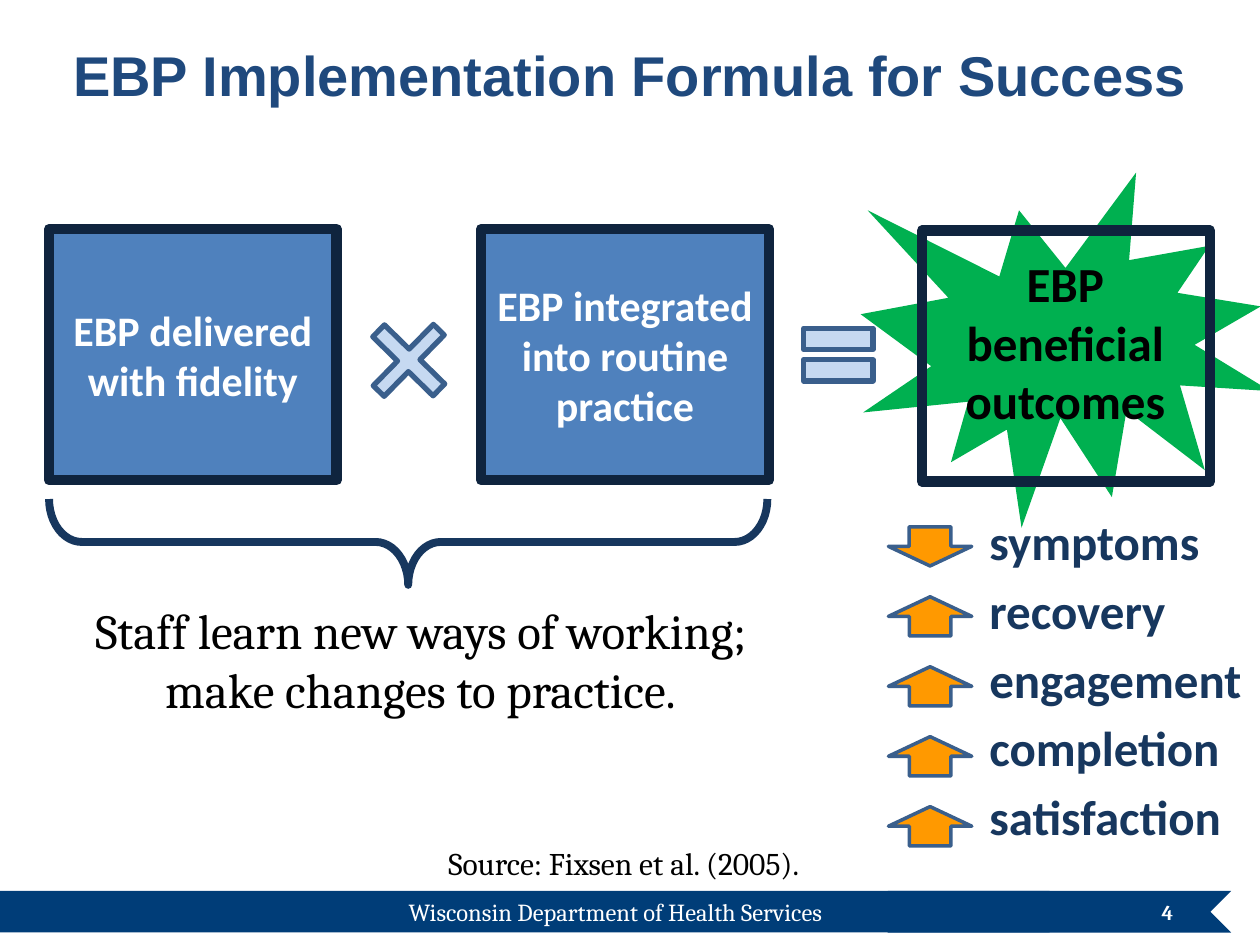
from pptx import Presentation
from pptx.dml.color import RGBColor
from pptx.enum.shapes import MSO_SHAPE as Shape
from pptx.enum.text import MSO_ANCHOR as Anchor, MSO_AUTO_SIZE as AutoSize, PP_ALIGN as Align
from pptx.oxml.ns import qn
from pptx.util import Cm, Pt
from lxml.etree import SubElement

COLORS = {
    "band": "003D78", "white": "FFFFFF", "black": "000000", "title": "1F497D",
    "factor": "4F81BD", "frame": "0F243E", "burst": "00B050", "operator": "C6D9F1",
    "edge": "3A5F8C", "arrow": "FF9900", "navy": "17375E",
}

# Text styles: font values, colour, alignment
STYLES = {
    "title": ({"name": "Arial", "size": Pt(32), "bold": True}, "title", Align.CENTER),
    "factor": ({"name": "Calibri", "size": Pt(24), "bold": True}, "white", Align.CENTER),
    "result": ({"name": "Calibri", "size": Pt(28), "bold": True}, "black", Align.CENTER),
    "outcome": ({"name": "Calibri", "size": Pt(28), "bold": True}, "navy", Align.LEFT),
    "summary": ({"name": "Cambria", "size": Pt(28), "bold": False}, "black", Align.CENTER),
    "source": ({"name": "Cambria", "size": Pt(18), "bold": False}, "black", Align.CENTER),
    "agency": ({"name": "Cambria", "size": Pt(14), "bold": False}, "white", Align.CENTER),
    "number": ({"name": "Cambria", "size": Pt(12), "bold": True}, "white", Align.RIGHT),
}


def rgb(name):
    return RGBColor.from_string(COLORS[name])


def set_all(target, values):
    for key, value in values.items():
        setattr(target, key, value)


def write(holder, lines, style, anchor=Anchor.TOP, space_before=0):
    font_values, color, align = STYLES[style]
    frame = holder.text_frame
    frame.text = "\n".join(lines)
    set_all(frame, {"word_wrap": True, "auto_size": AutoSize.NONE, "vertical_anchor": anchor})
    for paragraph in frame.paragraphs:
        set_all(paragraph, {"alignment": align, "space_before": Pt(space_before)})
        for run in paragraph.runs:
            set_all(run.font, font_values)
            run.font.color.rgb = rgb(color)


def place(holder, box):
    set_all(holder, dict(zip(("left", "top", "width", "height"), map(Cm, box))))


def add_text(slide, box, text, style, **options):
    write(slide.shapes.add_textbox(*map(Cm, box)), [text], style, **options)


def add_figure(slide, kind, box, fill=None, line=None, weight=0, rotation=0, adjust=()):
    figure = slide.shapes.add_shape(kind, *map(Cm, box))
    figure.shadow.inherit = False
    figure.rotation = rotation
    for index, value in enumerate(adjust):
        figure.adjustments[index] = value
    if fill:
        figure.fill.solid()
        figure.fill.fore_color.rgb = rgb(fill)
    else:
        figure.fill.background()
    if line:
        figure.line.color.rgb = rgb(line)
        figure.line.width = Pt(weight)
    else:
        figure.line.fill.background()
    return figure


def add_footer(slide, left, top, width, height):
    ribbon = 7.34
    add_figure(slide, Shape.CHEVRON, (left + width - ribbon, top, ribbon, height),
               "band", rotation=180)
    add_figure(slide, Shape.RECTANGLE, (left, top, width - 3.66, height), "band")
    add_text(slide, (left, top, width, height),
             "Wisconsin Department of Health Services", "agency")
    add_text(slide, (left + width - 6.84, top - 0.08, 5.92, 1.02), "4", "number",
             anchor=Anchor.MIDDLE)


def add_title(slide, box):
    place(slide.shapes.title, box)
    write(slide.shapes.title, ["EBP Implementation Formula for Success"], "title",
          anchor=Anchor.MIDDLE)


def add_formula(slide, left, top, side, height):
    # Two factors
    factors = [(0, "EBP delivered with fidelity"), (8.71, "EBP integrated into routine practice")]
    for offset, label in factors:
        factor = add_figure(slide, Shape.RECTANGLE, (left + offset, top, side, height),
                            "factor", "frame", 6)
        write(factor, [label], "factor", anchor=Anchor.MIDDLE)
    # Result on a burst
    result = left + 17.6
    add_figure(slide, Shape.EXPLOSION1, (result - 1.24, top - 1.14, 8.26, 7.16), "burst")
    add_text(slide, (result + 0.13, top + 0.36, 5.51, 3.84), "EBP beneficial outcomes", "result")
    add_figure(slide, Shape.RECTANGLE, (result, top + 0.03, side, height), None, "frame", 6)
    # Operators
    add_figure(slide, Shape.CROSS, (left + 6.4, top + 1.78, 1.7, 1.73),
               "operator", "edge", 3, 44.4, [0.41])
    add_figure(slide, Shape.MATH_EQUAL, (left + 14.96, top + 1.63, 1.9, 1.8),
               "operator", "edge", 3)


def add_summary(slide, left, top, width, depth):
    # A left brace turned so that it points down
    brace_box = (left + (width - depth) / 2, top + (depth - width) / 2, depth, width)
    add_figure(slide, Shape.LEFT_BRACE, brace_box, None, "navy", 4.5, 270, [0.38, 0.5])
    add_text(slide, (left - 0.35, top + 1.93, 15.67, 4.47),
             "Staff learn new ways of working; make changes to practice.", "summary",
             space_before=5.6)


def add_outcomes(slide, left, top, width, height):
    outcomes = ["symptoms", "recovery", "engagement", "completion", "satisfaction"]
    body = slide.placeholders[1]
    place(body, (left + 1.78, top, width - 1.78, height))
    write(body, outcomes, "outcome", space_before=5.6)
    for paragraph in body.text_frame.paragraphs:
        properties = paragraph._p.get_or_add_pPr()
        properties.set("marL", "0")
        properties.set("indent", "0")
        SubElement(properties, qn("a:buNone"))
    # Symptoms fall, everything else rises
    for row, outcome in enumerate(outcomes):
        add_figure(slide, Shape.DOWN_ARROW, (left, top + 0.43 + 1.41 * row, 1.68, 0.79),
                   "arrow", "edge", 2, 0 if outcome == "symptoms" else 180)


def main():
    deck = Presentation()
    set_all(deck, {"slide_width": Cm(25.4), "slide_height": Cm(19.05)})
    slide = deck.slides.add_slide(deck.slide_layouts[1])
    add_footer(slide, 0, 17.96, 24.82, 0.84)
    add_title(slide, (0.64, 0.58, 24.13, 1.83))
    add_formula(slide, 0.99, 4.62, 5.8, 5.06)
    add_summary(slide, 0.99, 10.06, 14.48, 1.73)
    add_outcomes(slide, 17.91, 10.19, 7.57, 7.06)
    add_text(slide, (2.11, 16.89, 20.93, 1.02), "Source: Fixsen et al. (2005).", "source")
    deck.save("out.pptx")


if __name__ == "__main__":
    main()
